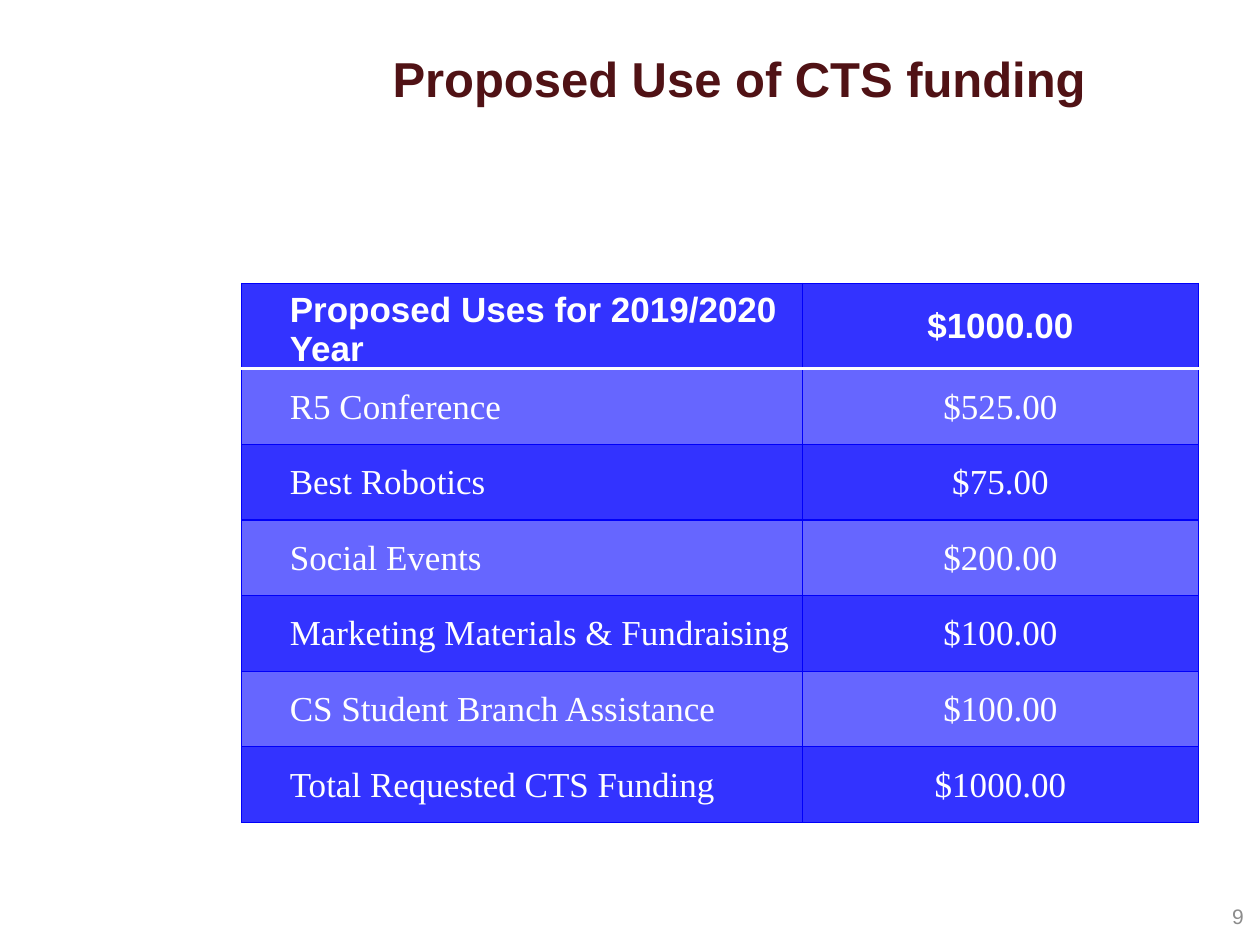
from lxml.etree import SubElement
from pptx import Presentation
from pptx.dml.color import RGBColor
from pptx.enum.text import MSO_ANCHOR as Anchor, PP_ALIGN as Align
from pptx.oxml.ns import qn
from pptx.util import Inches, Pt

MAROON = RGBColor(0x50, 0x12, 0x15)
GRAY = RGBColor(0x8C, 0x8C, 0x8C)
WHITE = RGBColor(0xFF, 0xFF, 0xFF)
BLUE = RGBColor(0x33, 0x33, 0xFF)
LIGHT_BLUE = RGBColor(0x66, 0x66, 0xFF)
BORDER_BLUE = RGBColor(0x00, 0x00, 0xF9)

FUNDING = [
    ("Proposed Uses for 2019/2020 Year", "$1000.00"),
    ("R5 Conference", "$525.00"),
    ("Best Robotics", "$75.00"),
    ("Social Events", "$200.00"),
    ("Marketing Materials & Fundraising", "$100.00"),
    ("CS Student Branch Assistance", "$100.00"),
    ("Total Requested CTS Funding", "$1000.00"),
]


class FundingSlide:
    heading_font = "Arial"
    body_font = "Times New Roman"

    def __init__(self, presentation):
        self.slide = presentation.slides.add_slide(presentation.slide_layouts[5])

    def set_text(self, frame, text, size, color, align, font=heading_font, bold=False):
        frame.word_wrap = True
        paragraph = frame.paragraphs[0]
        paragraph.text = text
        paragraph.alignment = align
        paragraph.font.name = font
        paragraph.font.size = Pt(size)
        paragraph.font.bold = bold
        paragraph.font.color.rgb = color

    def title(self, text, left, top, width, height):
        shape = self.slide.shapes.title
        shape.left, shape.top = Inches(left), Inches(top)
        shape.width, shape.height = Inches(width), Inches(height)
        shape.text_frame.vertical_anchor = Anchor.MIDDLE
        self.set_text(shape.text_frame, text, 28, MAROON, Align.CENTER, bold=True)

    def page_number(self, text, left, top, width, height):
        shape = self.slide.shapes.add_textbox(
            Inches(left), Inches(top), Inches(width), Inches(height))
        shape.text_frame.vertical_anchor = Anchor.MIDDLE
        self.set_text(shape.text_frame, text, 12, GRAY, Align.RIGHT)

    def border(self, cell, side, color, width):
        properties = cell._tc.get_or_add_tcPr()
        line = SubElement(properties, qn(f"a:ln{side}"), w=str(Pt(width)))
        fill = SubElement(line, qn("a:solidFill"))
        SubElement(fill, qn("a:srgbClr"), val=str(color))

    def cell(self, cell, text, row, column):
        is_header = row == 0
        is_label = column == 0
        for side in "LRTB":
            under_header = (side == "B" and row == 0) or (side == "T" and row == 1)
            if under_header:
                self.border(cell, side, WHITE, 2)
            else:
                self.border(cell, side, BORDER_BLUE, 0.75)
        cell.fill.solid()
        cell.fill.fore_color.rgb = LIGHT_BLUE if row % 2 else BLUE
        cell.margin_left = Inches(0.38 if is_label else 0.01)
        cell.margin_right = cell.margin_top = Inches(0.01)
        cell.margin_bottom = 0
        cell.vertical_anchor = Anchor.BOTTOM if is_header and is_label else Anchor.MIDDLE
        self.set_text(cell.text_frame, text, 20, WHITE,
                      Align.LEFT if is_label else Align.CENTER,
                      self.heading_font if is_header else self.body_font, is_header)

    def table(self, rows, left, top, column_widths, row_height):
        table = self.slide.shapes.add_table(
            len(rows), len(column_widths), Inches(left), Inches(top),
            Inches(sum(column_widths)), Inches(row_height * len(rows))).table
        for column, width in zip(table.columns, column_widths):
            column.width = Inches(width)
        for row, texts in enumerate(rows):
            table.rows[row].height = Inches(row_height)
            for column, text in enumerate(texts):
                self.cell(table.cell(row, column), text, row, column)


def main():
    presentation = Presentation()
    presentation.slide_width, presentation.slide_height = Inches(10), Inches(7.5)
    funding_slide = FundingSlide(presentation)
    funding_slide.page_number("9", 7.64, 7.07, 2.33, 0.4)
    funding_slide.table(FUNDING, 1.92, 2.25, (4.45, 3.14), 0.6)
    funding_slide.title("Proposed Use of CTS funding ", 2.17, -0.01, 7.5, 1.25)
    presentation.save("out.pptx")


if __name__ == "__main__":
    main()
